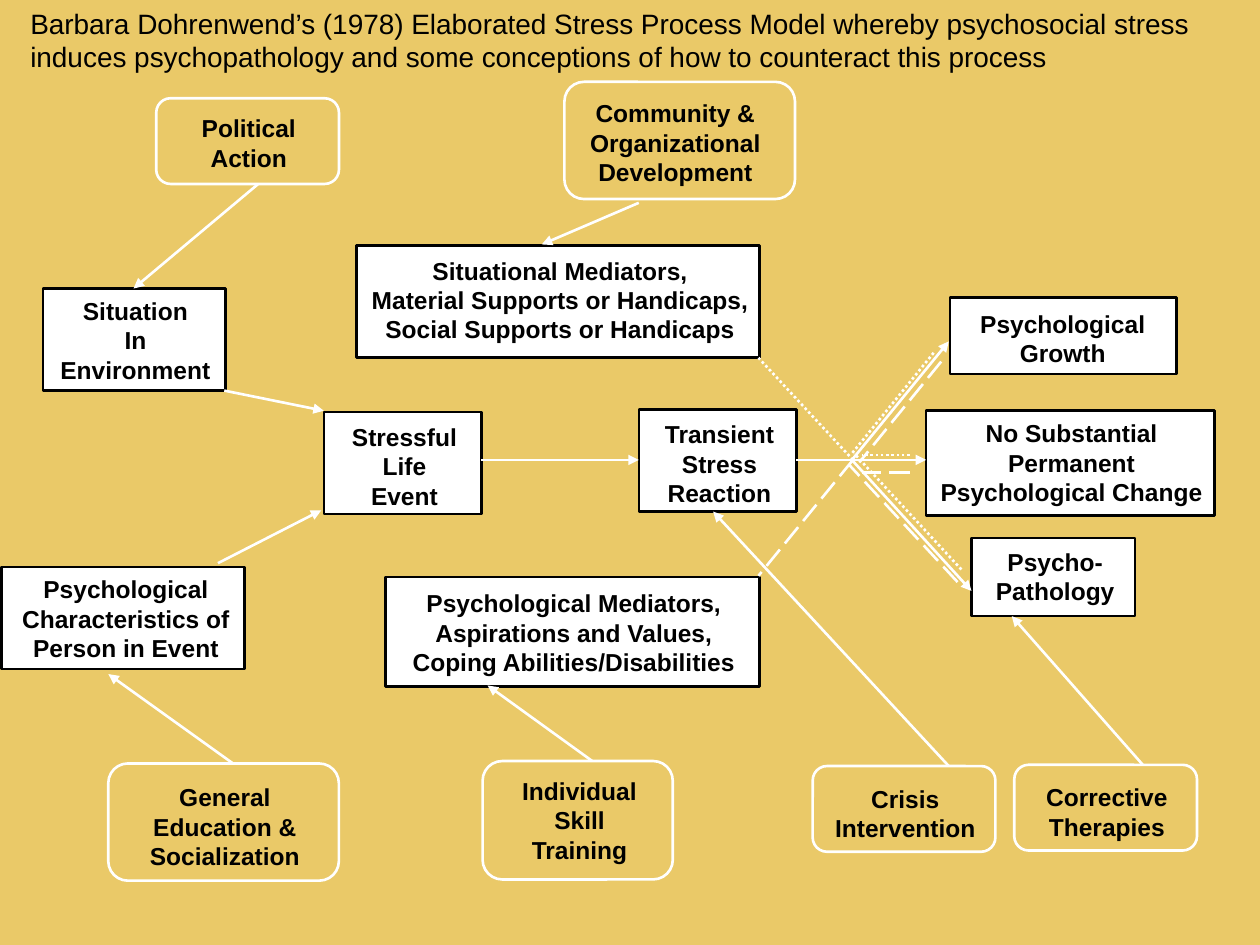
from lxml.etree import SubElement
from pptx import Presentation
from pptx.dml.color import RGBColor
from pptx.enum.dml import MSO_LINE as Dash
from pptx.enum.shapes import MSO_CONNECTOR as Connector, MSO_SHAPE as Shape
from pptx.enum.text import MSO_ANCHOR as Anchor, MSO_AUTO_SIZE as AutoSize, PP_ALIGN as Align
from pptx.oxml.ns import qn
from pptx.util import Inches, Pt

BLACK, WHITE, GOLD = "000000", "FFFFFF", "EAC968"
LINE_WIDTH = Pt(1.5)

# Content: wording, frame and text area (left, top, width, height in inches)
TITLE = ("Barbara Dohrenwend’s (1978) Elaborated Stress Process Model whereby psychosocial "
         "stress induces psychopathology and some conceptions of how to counteract this process")

INTERVENTIONS = [
    ("Political\nAction", (1.24, 0.78, 1.45, 0.68), (1.4, 0.85, 1.15, 0.53)),
    ("Community & Organizational Development", (4.48, 0.65, 1.83, 0.93), (4.57, 0.73, 1.58, 0.78)),
    ("General Education & Socialization", (0.86, 6.06, 1.83, 0.93), (1.06, 6.16, 1.45, 0.79)),
    ("Individual\nSkill\nTraining", (3.83, 6.04, 1.51, 0.94), (3.98, 6.11, 1.24, 0.83)),
    ("Crisis\nIntervention", (6.45, 6.08, 1.45, 0.68), (6.49, 6.17, 1.39, 0.53)),
    ("Corrective\nTherapies", (8.05, 6.07, 1.45, 0.68), (8.09, 6.16, 1.39, 0.53)),
]
STAGES = [
    ("Psycho-\nPathology", (7.71, 4.27, 1.3, 0.62), (7.77, 4.29, 1.21, 0.52)),
    ("Psychological\nGrowth", (7.54, 2.36, 1.8, 0.61), (7.66, 2.4, 1.55, 0.52)),
    ("No Substantial\nPermanent\nPsychological Change",
     (7.35, 3.26, 2.29, 0.83), (7.34, 3.27, 2.33, 0.77)),
    ("Transient\nStress\nReaction", (5.07, 3.25, 1.25, 0.81), (5.07, 3.28, 1.28, 0.77)),
    ("Stressful\nLife\nEvent", (2.57, 3.27, 1.25, 0.81), (2.57, 3.3, 1.28, 0.77)),
    ("Situation\nIn\nEnvironment", (0.34, 2.29, 1.45, 0.81), (0.37, 2.3, 1.41, 0.77)),
    ("Psychological Characteristics of Person in Event",
     (0.01, 4.5, 1.93, 0.81), (0, 4.51, 2, 0.77)),
    ("Situational Mediators,\nMaterial Supports or Handicaps,\nSocial Supports or Handicaps",
     (2.83, 1.95, 3.2, 0.89), (2.85, 1.98, 3.19, 0.84)),
    ("Psychological Mediators,\nAspirations and Values, Coping Abilities/Disabilities",
     (3.06, 4.58, 2.97, 0.87), (3.07, 4.62, 2.97, 0.82)),
]

# Lines: start x, start y, end x, end y
ARROWS = [
    (1.78, 3.1, 2.57, 3.26), (1.73, 4.47, 2.55, 4.05),    # into the event
    (3.82, 3.65, 5.07, 3.65), (6.32, 3.65, 7.35, 3.65),   # main path
    (2.05, 1.46, 1.06, 2.29), (1.85, 6.06, 0.86, 5.35),   # interventions
    (5.07, 1.61, 4.3, 1.94), (4.7, 6.04, 3.87, 5.44),
    (7.53, 6.08, 5.66, 4.06), (9.07, 6.07, 8.03, 4.89),
    (6.77, 3.66, 7.71, 4.69), (6.77, 3.64, 7.53, 2.71),   # other outcomes
]
SITUATIONAL_PATHS = [
    (6.77, 3.65, 6.02, 2.84), (7.41, 2.8, 6.76, 3.6),
    (7.63, 4.52, 6.78, 3.6), (7.22, 3.61, 6.84, 3.61),
]
PSYCHOLOGICAL_PATHS = [
    (6.77, 3.65, 6.02, 4.57), (7.47, 2.87, 6.82, 3.67),
    (7.6, 4.62, 6.74, 3.69), (7.22, 3.75, 6.84, 3.75),
]


def color(value):
    return RGBColor.from_string(value)


def inches(values):
    return [Inches(value) for value in values]


def apply(target, settings):
    for name, value in settings.items():
        setattr(target, name, value)


def write(frame, text, size, bold, align, side_inset):
    frame.text = text
    apply(frame, {"word_wrap": True, "auto_size": AutoSize.NONE, "vertical_anchor": Anchor.TOP,
                  "margin_left": Inches(side_inset), "margin_right": Inches(side_inset)})
    for para in frame.paragraphs:
        para.alignment = align
        for span in para.runs:
            apply(span.font, {"name": "Arial", "size": Pt(size), "bold": bold})
            span.font.color.rgb = color(BLACK)


def add_node(page, text, frame_at, text_at, preset, outline, fill=None):
    group = page.shapes.add_group_shape()
    frame = group.shapes.add_shape(preset, *inches(frame_at))
    frame.shadow.inherit = False
    if fill:
        frame.fill.solid()
        frame.fill.fore_color.rgb = color(fill)
    else:
        frame.fill.background()
    frame.line.color.rgb = color(outline)
    frame.line.width = LINE_WIDTH
    box = group.shapes.add_textbox(*inches(text_at))
    write(box.text_frame, text, 14, True, Align.CENTER, 0.05)


def add_line(page, ends, dash=None, arrow=False):
    link = page.shapes.add_connector(Connector.STRAIGHT, *inches(ends))
    link.line.color.rgb = color(WHITE)
    link.line.width = LINE_WIDTH
    if dash:
        link.line.dash_style = dash
    if arrow:
        SubElement(link.line._get_or_add_ln(), qn("a:tailEnd"), type="triangle")
    SubElement(link._element.spPr, qn("a:effectLst"))


def main():
    deck = Presentation()
    deck.slide_width, deck.slide_height = Inches(10), Inches(7.5)
    page = deck.slides.add_slide(deck.slide_layouts[5])
    page.background.fill.solid()
    page.background.fill.fore_color.rgb = color(GOLD)

    # Title
    title = page.shapes.title
    apply(title, dict(zip(("left", "top", "width", "height"), inches((0.14, 0, 9.86, 0.5)))))
    write(title.text_frame, TITLE, 16, False, Align.LEFT, 0.1)

    # Stages and interventions
    for node in STAGES:
        add_node(page, *node, Shape.RECTANGLE, BLACK, WHITE)
    for node in INTERVENTIONS:
        add_node(page, *node, Shape.ROUNDED_RECTANGLE, WHITE)

    # Arrows and mediator paths
    for ends in ARROWS:
        add_line(page, ends, arrow=True)
    for ends in SITUATIONAL_PATHS:
        add_line(page, ends, Dash.ROUND_DOT)
    for ends in PSYCHOLOGICAL_PATHS:
        add_line(page, ends, Dash.LONG_DASH)

    deck.save("out.pptx")


if __name__ == "__main__":
    main()
